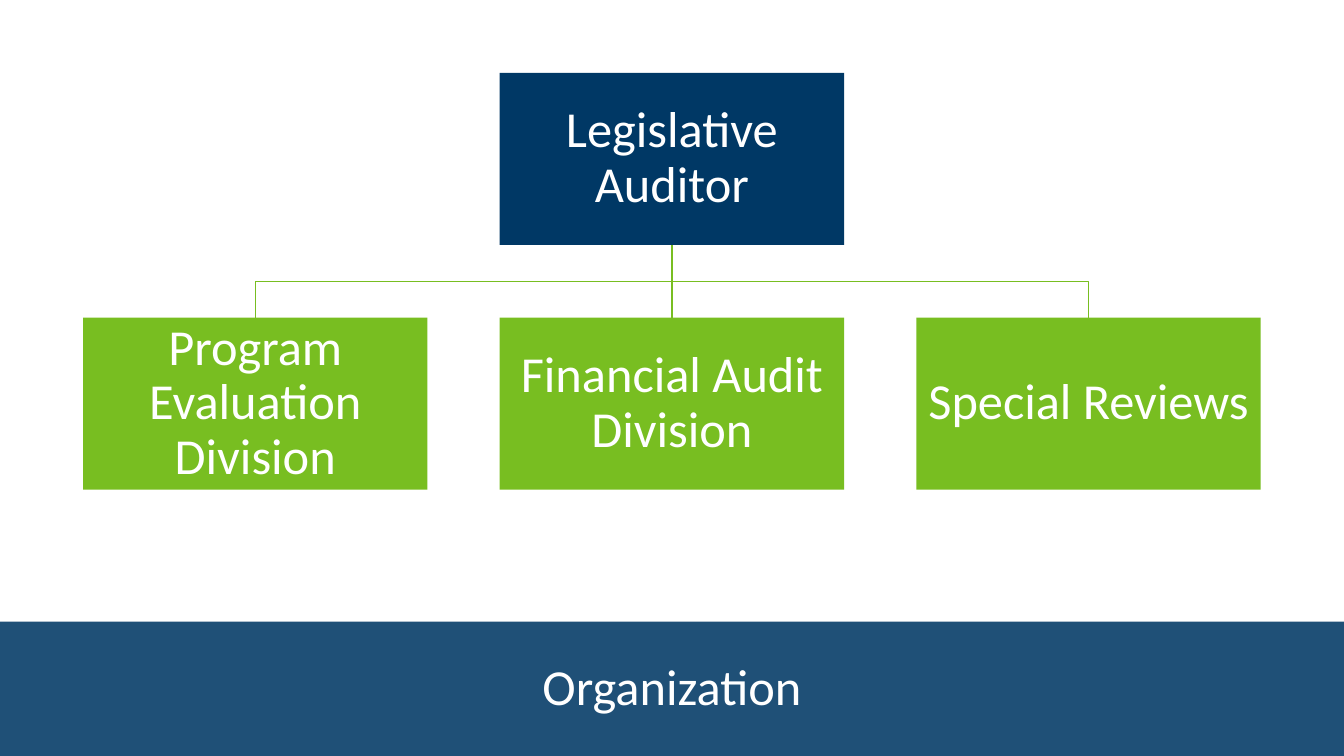
from lxml.etree import SubElement
from pptx import Presentation
from pptx.dml.color import RGBColor
from pptx.enum.shapes import MSO_CONNECTOR, MSO_SHAPE
from pptx.enum.text import MSO_ANCHOR, MSO_AUTO_SIZE, PP_ALIGN
from pptx.oxml.ns import qn
from pptx.util import Pt

NAVY = RGBColor(0x00, 0x38, 0x65)
GREEN = RGBColor(0x78, 0xBE, 0x21)
WHITE = RGBColor(0xFF, 0xFF, 0xFF)

PAGE_WIDTH, PAGE_HEIGHT = 960, 540
BAND_HEIGHT = 96
BOX_WIDTH, BOX_HEIGHT = 246, 123
COLUMN_STEP = 297.6
HEAD_TOP, DIVISION_TOP = 52, 226.8
LINE_WIDTH = 0.85
DIVISIONS = ["Program Evaluation Division", "Financial Audit Division", "Special Reviews"]


def write_text(shape, text):
    frame = shape.text_frame
    frame.word_wrap = True
    frame.auto_size = MSO_AUTO_SIZE.NONE
    frame.vertical_anchor = MSO_ANCHOR.MIDDLE
    para = frame.paragraphs[0]
    para.alignment = PP_ALIGN.CENTER
    para.line_spacing = 0.9
    span = para.add_run()
    span.text = text
    span.font.name = "Calibri"
    span.font.size = Pt(36)
    span.font.color.rgb = WHITE


def fill_solid(shape, color):
    shape.fill.solid()
    shape.fill.fore_color.rgb = color


def add_title(page, text):
    title = page.shapes.title
    title.left, title.top = Pt(0), Pt(PAGE_HEIGHT - BAND_HEIGHT)
    title.width, title.height = Pt(PAGE_WIDTH), Pt(BAND_HEIGHT)
    fill_solid(title, NAVY)
    color = title.element.spPr.find(qn("a:solidFill"))[0]
    SubElement(color, qn("a:alpha"), val="88000")
    write_text(title, text)


def add_box(page, center, top, color, text):
    box = page.shapes.add_shape(
        MSO_SHAPE.RECTANGLE, Pt(center - BOX_WIDTH / 2), Pt(top), Pt(BOX_WIDTH), Pt(BOX_HEIGHT)
    )
    box.shadow.inherit = False
    fill_solid(box, color)
    box.line.fill.background()
    frame = box.text_frame
    frame.margin_left = frame.margin_right = Pt(2)
    frame.margin_top = frame.margin_bottom = Pt(2)
    write_text(box, text)
    return box


def style_line(shape):
    shape.line.color.rgb = GREEN
    shape.line.width = Pt(LINE_WIDTH)


def add_straight_link(page, head, division):
    link = page.shapes.add_connector(MSO_CONNECTOR.STRAIGHT, 0, 0, 0, 0)
    link.begin_connect(head, 2)
    link.end_connect(division, 0)
    style_line(link)
    SubElement(link.element.spPr, qn("a:effectLst"))


def add_elbow_link(page, start, end):
    bottom = HEAD_TOP + BOX_HEIGHT
    middle = (bottom + DIVISION_TOP) / 2
    builder = page.shapes.build_freeform(Pt(start), Pt(bottom))
    corners = [(start, middle), (end, middle), (end, DIVISION_TOP)]
    builder.add_line_segments([(Pt(x), Pt(y)) for x, y in corners], close=False)
    link = builder.convert_to_shape()
    link.shadow.inherit = False
    link.fill.background()
    style_line(link)


def main():
    deck = Presentation()
    deck.slide_width, deck.slide_height = Pt(PAGE_WIDTH), Pt(PAGE_HEIGHT)
    page = deck.slides.add_slide(deck.slide_layouts[5])
    add_title(page, "Organization")

    middle = PAGE_WIDTH / 2
    centers = [middle + COLUMN_STEP * step for step in (-1, 0, 1)]
    for center in (centers[0], centers[2]):
        add_elbow_link(page, middle, center)
    head = add_box(page, middle, HEAD_TOP, NAVY, "Legislative Auditor")
    boxes = [
        add_box(page, center, DIVISION_TOP, GREEN, name)
        for center, name in zip(centers, DIVISIONS)
    ]
    add_straight_link(page, head, boxes[1])
    deck.save("out.pptx")


if __name__ == "__main__":
    main()
